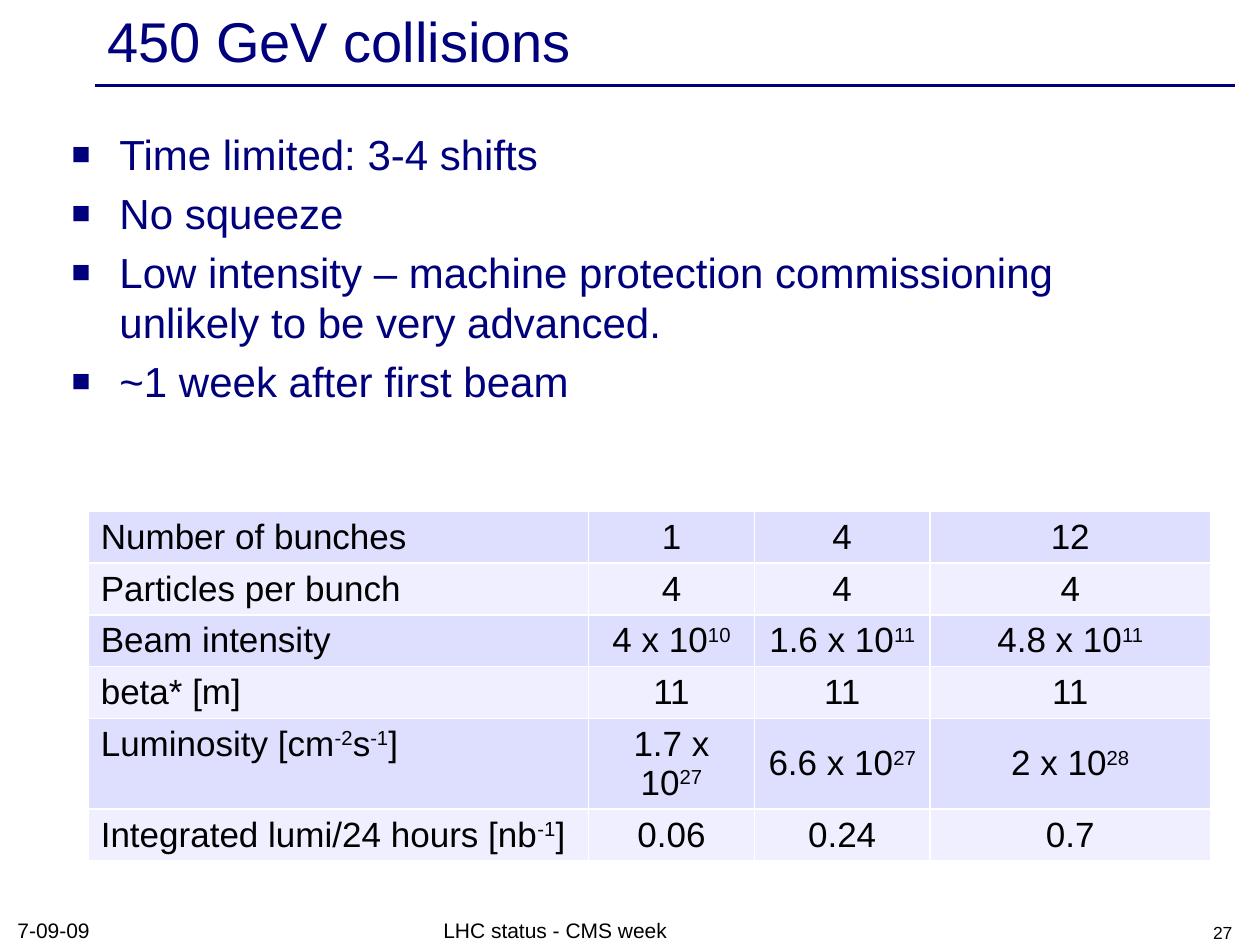
from dataclasses import dataclass

from lxml.etree import SubElement
from pptx import Presentation
from pptx.dml.color import RGBColor
from pptx.enum.shapes import MSO_CONNECTOR
from pptx.enum.text import MSO_ANCHOR as Anchor, MSO_AUTO_SIZE as AutoSize, PP_ALIGN as Align
from pptx.oxml.ns import qn
from pptx.util import Inches, Pt


@dataclass(frozen=True)
class Theme:
    """Colours, type sizes and font of the slide."""
    navy: str = "00007D"
    black: str = "000000"
    white: str = "FFFFFF"
    bands: tuple = ("DEDEFF", "EFEFFF")
    font: str = "Arial"
    title: int = 32
    body: int = 24
    cell: int = 20
    footer: int = 12
    number: int = 10


T = Theme()
BULLETS = [
    "Time limited: 3-4 shifts",
    "No squeeze",
    "Low intensity – machine protection commissioning unlikely to be very advanced.",
    "~1 week after first beam",
]
COLUMN_WIDTHS = [3.97, 1.32, 1.39, 2.23]
BEAM_ROWS = [
    ["Number of bunches", "1", "4", "12"],
    ["Particles per bunch", "4", "4", "4"],
    ["Beam intensity", "4 x 10^10^", "1.6 x 10^11^", "4.8 x 10^11^"],
    ["beta* [m]", "11", "11", "11"],
    ["Luminosity [cm^-2^s^-1^]", "1.7 x 10^27^", "6.6 x 10^27^", "2 x 10^28^"],
    ["Integrated lumi/24 hours [nb^-1^]", "0.06", "0.24", "0.7"],
]


def apply(obj, **values):
    """Set every given attribute on an object."""
    for name, value in values.items():
        setattr(obj, name, value)


def add_text(p, text, size, color, align=Align.LEFT):
    """Write text into a paragraph, raising the parts between carets."""
    p.alignment = align
    for i, part in enumerate(text.split("^")):
        if part:
            r = p.add_run()
            r.text = part
            apply(r.font, name=T.font, size=Pt(size))
            r.font.color.rgb = RGBColor.from_string(color)
            if i % 2:
                r.font._element.set("baseline", "30000")


def add_box(s, box, anchor):
    """Add a wrapping text box and return its text frame."""
    tf = s.shapes.add_textbox(*map(Inches, box)).text_frame
    apply(tf, word_wrap=True, auto_size=AutoSize.NONE, vertical_anchor=anchor)
    return tf


def add_title(s, box, text):
    """Place the title and the rule below it."""
    x, y, w, h = box
    sp = s.shapes.title
    apply(sp, left=Inches(x), top=Inches(y), width=Inches(w), height=Inches(h))
    tf = sp.text_frame
    apply(tf, word_wrap=True, auto_size=AutoSize.NONE, vertical_anchor=Anchor.MIDDLE)
    add_text(tf.paragraphs[0], text, T.title, T.navy)
    rule_y = Inches(y + h + 0.08)
    rule = s.shapes.add_connector(MSO_CONNECTOR.STRAIGHT, Inches(x), rule_y, Inches(9.8), rule_y)
    rule.line.color.rgb = RGBColor.from_string(T.navy)
    rule.line.width = Pt(2)
    SubElement(rule._element.spPr, qn("a:effectLst"))


def add_bullets(s, box, items):
    """Fill a box with square-bulleted paragraphs."""
    tf = add_box(s, box, Anchor.TOP)
    for i, item in enumerate(items):
        p = tf.add_paragraph() if i else tf.paragraphs[0]
        pPr = p._p.get_or_add_pPr()
        apply_indent = {"marL": Inches(0.38), "indent": -Inches(0.38)}
        for name, value in apply_indent.items():
            pPr.set(name, str(value))
        SubElement(SubElement(pPr, qn("a:buClr")), qn("a:srgbClr"), val=T.navy)
        SubElement(pPr, qn("a:buSzPct"), val="75000")
        SubElement(pPr, qn("a:buFont"), typeface=T.font)
        SubElement(pPr, qn("a:buChar"), char="■")
        if i:
            p.space_before = Pt(4.8)
        add_text(p, item, T.body, T.navy)


def style_cell(cell, fill):
    """Give a cell thin white borders and a solid fill."""
    tcPr = cell._tc.get_or_add_tcPr()
    for side in ("lnL", "lnR", "lnT", "lnB"):
        ln = SubElement(tcPr, qn(f"a:{side}"), w=str(Pt(1)))
        SubElement(SubElement(ln, qn("a:solidFill")), qn("a:srgbClr"), val=T.white)
    cell.fill.solid()
    cell.fill.fore_color.rgb = RGBColor.from_string(fill)


def add_beam_table(s, box, rows, widths):
    """Add the banded table of beam parameters."""
    table = s.shapes.add_table(len(rows), len(widths), *map(Inches, box)).table
    apply(table, first_row=False, horz_banding=False)
    for column, width in zip(table.columns, widths):
        column.width = Inches(width)
    for i, row in enumerate(rows):
        for j, text in enumerate(row):
            cell = table.cell(i, j)
            style_cell(cell, T.bands[i % 2])
            cell.vertical_anchor = Anchor.MIDDLE if j else Anchor.TOP
            align = Align.CENTER if j else Align.LEFT
            add_text(cell.text_frame.paragraphs[0], text, T.cell, T.black, align)


def add_footer(s, box):
    """Place date, occasion and slide number along the bottom."""
    x, y, w, h = box
    parts = [
        (0, 2.33, "7-09-09", T.footer, Align.LEFT),
        (3.38, 3.17, "LHC status - CMS week", T.footer, Align.LEFT),
        (w - 2.33, 2.33, "27", T.number, Align.RIGHT),
    ]
    for dx, width, text, size, align in parts:
        tf = add_box(s, (x + dx, y, width, h), Anchor.BOTTOM)
        add_text(tf.paragraphs[0], text, size, T.black, align)


def main():
    """Build and save the slide."""
    prs = Presentation()
    apply(prs, slide_width=Inches(10), slide_height=Inches(7.5))
    s = prs.slides.add_slide(prs.slide_layouts[5])
    add_title(s, (0.75, 0.03, 9, 0.57), "450 GeV collisions")
    add_bullets(s, (0.47, 0.97, 9, 2.28), BULLETS)
    add_beam_table(s, (0.7, 4.06, sum(COLUMN_WIDTHS), 2.46), BEAM_ROWS, COLUMN_WIDTHS)
    add_footer(s, (0.04, 7.25, 9.84, 0.28))
    prs.save("out.pptx")


if __name__ == "__main__":
    main()
